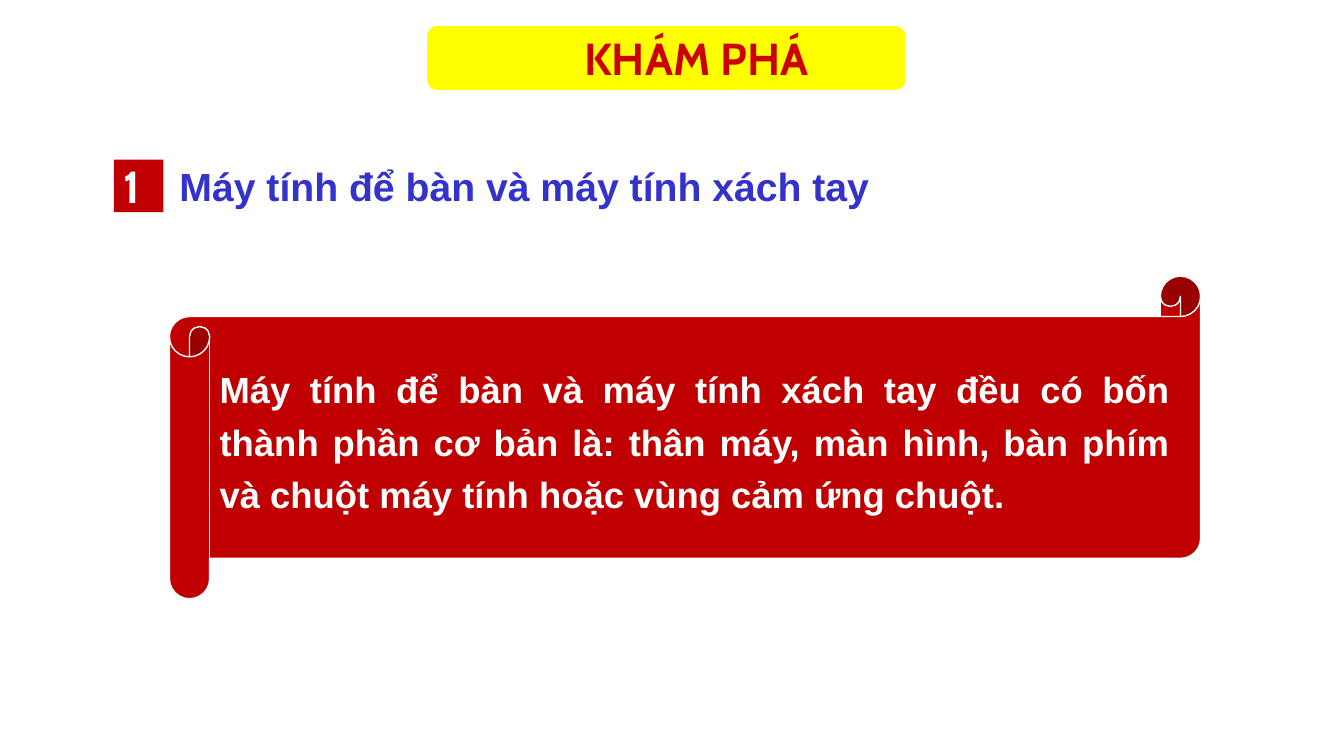
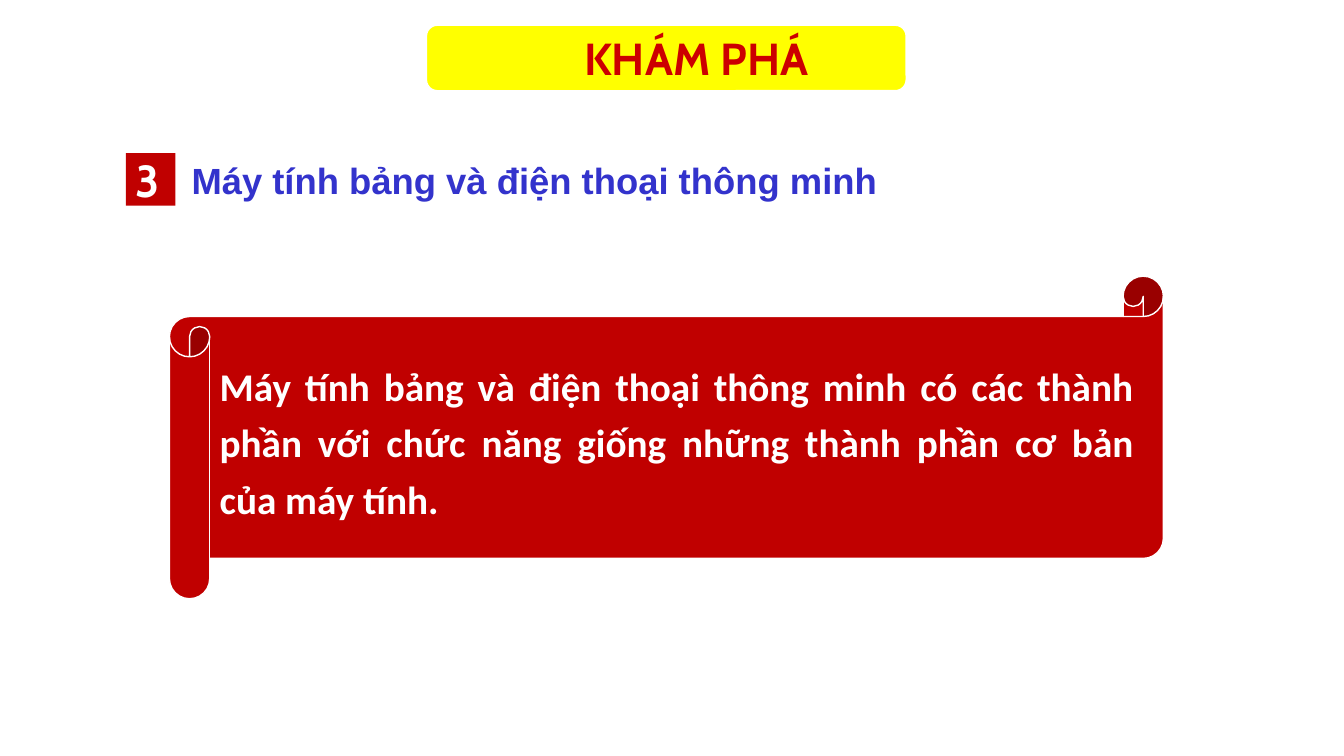
from pptx import Presentation
from pptx.dml.color import RGBColor
from pptx.enum import shapes, text
from pptx.util import Pt

COLORS = {
    "yellow": "FFFF00",
    "red": "C00000",
    "banner_text": "CC0000",
    "heading": "3333CC",
    "white": "FFFFFF",
}
SHAPE = shapes.MSO_SHAPE
ALIGN = text.PP_ALIGN


def rgb(name):
    return RGBColor.from_string(COLORS[name])


def write(sp, content, font="Arial", size=28, color="white", align=ALIGN.LEFT,
          spacing=1.0, left=7.2, top=3.6):
    """Fill a shape with one bold, vertically centred paragraph."""
    tf = sp.text_frame
    tf.word_wrap = True
    tf.auto_size = text.MSO_AUTO_SIZE.NONE
    tf.vertical_anchor = text.MSO_ANCHOR.MIDDLE
    tf.margin_left, tf.margin_right = Pt(left), Pt(7.2)
    tf.margin_top = tf.margin_bottom = Pt(top)
    p = tf.paragraphs[0]
    p.alignment = align
    p.line_spacing = spacing
    r = p.add_run()
    r.text = content
    r.font.name = font
    r.font.size = Pt(size)
    r.font.bold = True
    r.font.color.rgb = rgb(color)


def add_box(s, kind, box, fill, line=None):
    sp = s.shapes.add_shape(kind, *map(Pt, box))
    sp.shadow.inherit = False
    sp.fill.solid()
    sp.fill.fore_color.rgb = rgb(fill)
    if line:
        sp.line.color.rgb = rgb(line)
        sp.line.width = Pt(1)
    else:
        sp.line.fill.background()
    return sp


def add_banner(s, box):
    sp = add_box(s, SHAPE.ROUNDED_RECTANGLE, box, "yellow", "white")
    # The wider left inset shifts the centred word to the right
    write(sp, "KHÁM PHÁ", font="Cabin", size=32, color="banner_text",
          align=ALIGN.CENTER, left=50, top=0)


def add_heading(s, box, number, title, size):
    x, y, w, h = box
    badge_w, gap = 35.3, 4.3
    # Number badge
    badge = add_box(s, SHAPE.RECTANGLE, (x, y, badge_w, h), "red")
    write(badge, number, font="Cabin", size=32, top=0)
    # Slide title
    sp = s.shapes.title
    title_x = x + badge_w + gap
    sp.left, sp.top = Pt(title_x), Pt(y)
    sp.width, sp.height = Pt(x + w - title_x), Pt(h)
    write(sp, title, size=size, color="heading", top=0)


def add_scroll(s, box, content, font, size):
    sp = add_box(s, SHAPE.HORIZONTAL_SCROLL, box, "red", "white")
    write(sp, content, font=font, size=size, align=ALIGN.JUSTIFY, spacing=1.2)


def add_summary_slide(prs, number, title, title_size, origin,
                      content, font, size, scroll_w):
    s = prs.slides.add_slide(prs.slide_layouts[5])
    add_banner(s, (304.6, 18, 342.7, 46.8))
    add_heading(s, (*origin, 555, 37.6), number, title, title_size)
    add_scroll(s, (121, 197.3, scroll_w, 230.4), content, font, size)


def main():
    prs = Presentation()
    prs.slide_width, prs.slide_height = Pt(960), Pt(540)
    add_summary_slide(
        prs, "1", "Máy tính để bàn và máy tính xách tay", 28, (81.4, 114),
        "Máy tính để bàn và máy tính xách tay đều có bốn thành phần cơ bản là: "
        "thân máy, màn hình, bàn phím và chuột máy tính hoặc vùng cảm ứng chuột.",
        "Arial", 26, 736.6)
    add_summary_slide(
        prs, "3", "Máy tính bảng và điện thoại thông minh", 26, (90, 109.4),
        "Máy tính bảng và điện thoại thông minh có các thành phần với chức năng "
        "giống những thành phần cơ bản của máy tính.",
        "Calibri", 28, 710)
    prs.save("out.pptx")


if __name__ == "__main__":
    main()
